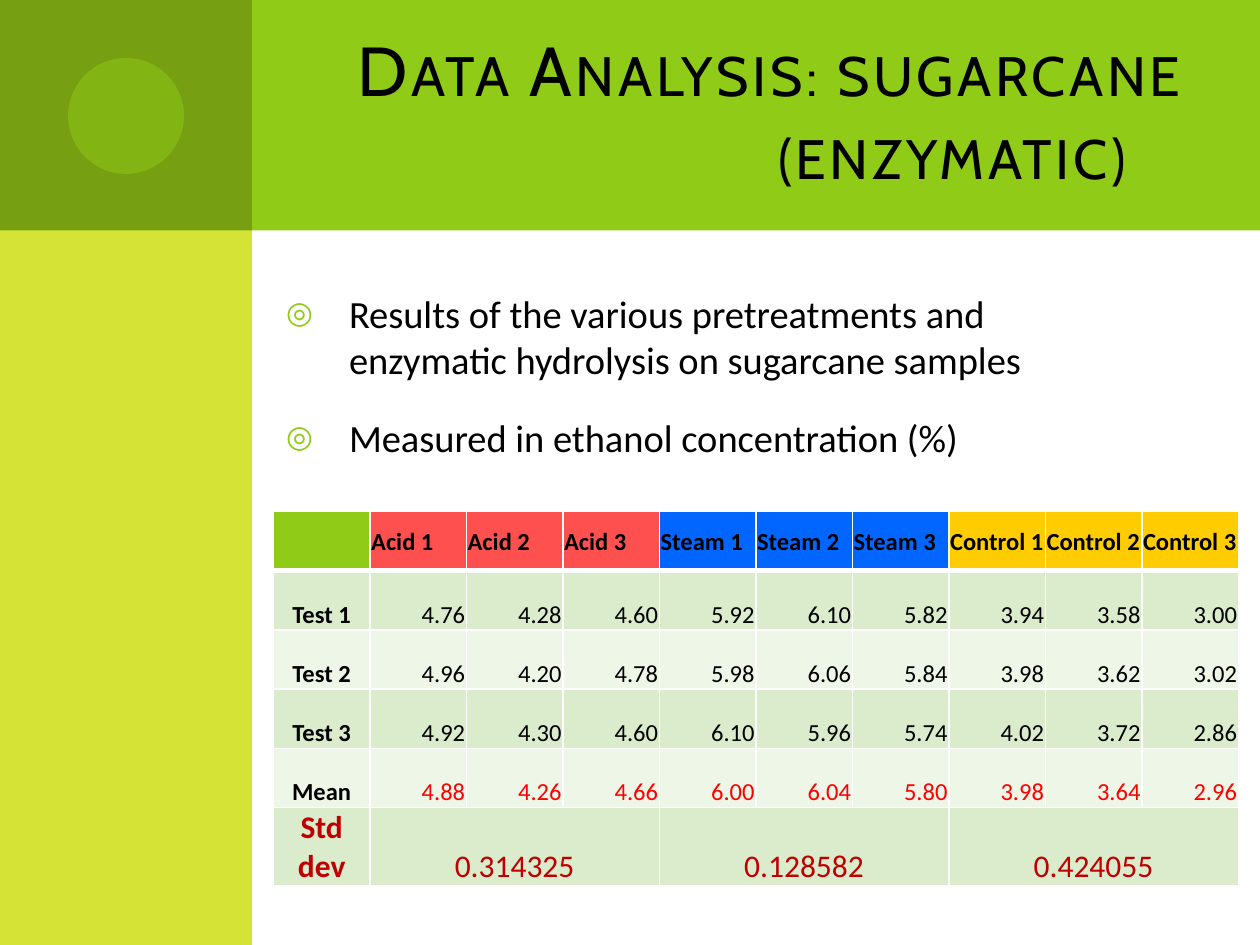
from dataclasses import dataclass

from lxml.etree import SubElement
from pptx import Presentation
from pptx.dml.color import RGBColor
from pptx.enum.shapes import MSO_SHAPE as Shape
from pptx.enum.text import MSO_ANCHOR as Anchor, MSO_AUTO_SIZE as AutoSize, PP_ALIGN as Align
from pptx.oxml.ns import qn
from pptx.util import Inches, Pt


@dataclass(frozen=True)
class Theme:
    """Colours, fonts and type sizes of the slide."""
    green: str = "8FCB17"
    dark_green: str = "769F11"
    lime: str = "D4E336"
    white: str = "FFFFFF"
    black: str = "000000"
    mean_red: str = "FF0000"
    deviation_red: str = "C00000"
    acid: str = "FF5050"
    steam: str = "0066FF"
    control: str = "FFCC00"
    bands: tuple = ("DBECCC", "EEF6E8")
    title_font: str = "Cabin"
    body_font: str = "Calibri"
    title_size: float = 39.6
    body_size: float = 22
    table_size: float = 14
    deviation_size: float = 18


class SlideBuilder:
    """Draws styled elements on the current slide."""

    def __init__(self, slide, theme):
        """Keep the slide and its theme."""
        self.slide = slide
        self.theme = theme

    def format_run(self, run, font, size, color, bold=False):
        """Set the character format of a run."""
        run.font.name = font
        run.font.size = Pt(size)
        run.font.bold = bold
        run.font.color.rgb = RGBColor.from_string(color)

    def panel(self, kind, left, top, width, height, color, opacity=100):
        """Add a plain shape without an outline."""
        shape = self.slide.shapes.add_shape(
            kind, Inches(left), Inches(top), Inches(width), Inches(height))
        shape.shadow.inherit = False
        shape.line.fill.background()
        shape.fill.solid()
        shape.fill.fore_color.rgb = RGBColor.from_string(color)
        if opacity < 100:
            color_element = next(shape.element.spPr.iter(qn("a:srgbClr")))
            SubElement(color_element, qn("a:alpha"), val=str(opacity * 1000))

    def place(self, placeholder, left, top, width, height, anchor):
        """Position a placeholder in front of the panels and return its text frame."""
        placeholder.left, placeholder.top = Inches(left), Inches(top)
        placeholder.width, placeholder.height = Inches(width), Inches(height)
        placeholder.element.getparent().append(placeholder.element)
        text_frame = placeholder.text_frame
        text_frame.word_wrap = True
        text_frame.auto_size = AutoSize.NONE
        text_frame.vertical_anchor = anchor
        return text_frame

    def title(self, text, *box):
        """Fill the title placeholder with spaced small capitals."""
        text_frame = self.place(self.slide.shapes.title, *box, Anchor.MIDDLE)
        text_frame.text = text
        paragraph = text_frame.paragraphs[0]
        paragraph.alignment = Align.RIGHT
        run = paragraph.runs[0]
        self.format_run(run, self.theme.title_font, self.theme.title_size, self.theme.black)
        properties = run.font._element
        properties.set("cap", "small")
        properties.set("spc", "200")

    def bullets(self, lines, *box):
        """Fill the body placeholder with a bulleted list."""
        text_frame = self.place(self.slide.placeholders[1], *box, Anchor.TOP)
        text_frame.text = "\n".join(lines)
        for paragraph in text_frame.paragraphs:
            paragraph.space_before = Pt(18)
            properties = paragraph._p.get_or_add_pPr()
            properties.set("marL", str(Inches(0.5)))
            properties.set("indent", str(Inches(-0.5)))
            bullet_color = SubElement(properties, qn("a:buClr"))
            SubElement(bullet_color, qn("a:srgbClr"), val=self.theme.green)
            SubElement(properties, qn("a:buSzPct"), val="80000")
            SubElement(properties, qn("a:buChar"), char="◎")
            self.format_run(paragraph.runs[0], self.theme.body_font,
                            self.theme.body_size, self.theme.black)

    def table(self, row_heights, columns, left, top, width, height):
        """Add a table with equal columns and return it."""
        table = self.slide.shapes.add_table(
            len(row_heights), columns,
            Inches(left), Inches(top), Inches(width), Inches(height)).table
        for column in table.columns:
            column.width = Inches(width / columns)
        for row, row_height in zip(table.rows, row_heights):
            row.height = Inches(row_height)
        return table

    def cell(self, cell, text, fill, anchor=Anchor.BOTTOM, align=Align.CENTER,
             size=None, color=None, bold=False, header=False):
        """Fill and format one table cell."""
        cell.fill.solid()
        cell.fill.fore_color.rgb = RGBColor.from_string(fill)
        self.borders(cell, header)
        if not text:
            return
        cell.margin_left = cell.margin_right = cell.margin_top = Inches(0.01)
        cell.margin_bottom = 0
        cell.vertical_anchor = anchor
        cell.text_frame.text = text
        paragraph = cell.text_frame.paragraphs[0]
        paragraph.alignment = align
        self.format_run(paragraph.runs[0], self.theme.body_font,
                        size or self.theme.table_size, color or self.theme.black, bold)

    def borders(self, cell, header):
        """Draw white cell borders, with a heavy line under the header."""
        widths = {"lnL": 1, "lnR": 1, "lnB": 3 if header else 1}
        properties = cell._tc.get_or_add_tcPr()
        for position, (side, width) in enumerate(widths.items()):
            line = SubElement(properties, qn(f"a:{side}"), w=str(Pt(width)))
            fill = SubElement(line, qn("a:solidFill"))
            SubElement(fill, qn("a:srgbClr"), val=self.theme.white)
            properties.insert(position, line)


def add_results(builder):
    """Add the table of ethanol concentrations."""
    theme = builder.theme
    groups = [("Acid", theme.acid, "0.314325"),
              ("Steam", theme.steam, "0.128582"),
              ("Control", theme.control, "0.424055")]
    results = [
        ("Test 1", "4.76 4.28 4.60 5.92 6.10 5.82 3.94 3.58 3.00", theme.black),
        ("Test 2", "4.96 4.20 4.78 5.98 6.06 5.84 3.98 3.62 3.02", theme.black),
        ("Test 3", "4.92 4.30 4.60 6.10 5.96 5.74 4.02 3.72 2.86", theme.black),
        ("Mean", "4.88 4.26 4.66 6.00 6.04 5.80 3.98 3.64 2.96", theme.mean_red),
    ]
    table = builder.table([0.47] * 5 + [0.54], 10, 2.17, 4.06, 7.66, 2.98)

    builder.cell(table.cell(0, 0), "", theme.green, header=True)
    for row, (label, values, color) in enumerate(results, start=1):
        band = theme.bands[(row - 1) % 2]
        builder.cell(table.cell(row, 0), label, band, bold=True)
        for column, value in enumerate(values.split(), start=1):
            builder.cell(table.cell(row, column), value, band, align=Align.RIGHT, color=color)

    deviation_style = dict(fill=theme.bands[0], size=theme.deviation_size,
                           color=theme.deviation_red)
    builder.cell(table.cell(5, 0), "Std dev", bold=True, **deviation_style)
    for index, (name, color, deviation) in enumerate(groups):
        first = 1 + 3 * index
        for sample in range(3):
            builder.cell(table.cell(0, first + sample), f"{name} {sample + 1}", color,
                         Anchor.MIDDLE, Align.LEFT, bold=True, header=True)
        table.cell(5, first).merge(table.cell(5, first + 2))
        builder.cell(table.cell(5, first), deviation, **deviation_style)


def main():
    """Build and save the slide."""
    presentation = Presentation()
    presentation.slide_width, presentation.slide_height = Inches(10), Inches(7.5)
    theme = Theme()
    builder = SlideBuilder(presentation.slides.add_slide(presentation.slide_layouts[1]), theme)
    builder.panel(Shape.RECTANGLE, 0.5, 0, 9.5, 1.83, theme.green)
    builder.panel(Shape.RECTANGLE, 0, 0, 2, 7.5, theme.lime)
    builder.panel(Shape.RECTANGLE, 0, 0, 2, 1.83, theme.dark_green)
    builder.panel(Shape.OVAL, 0.54, 0.46, 0.92, 0.92, theme.green, opacity=50)
    builder.title("Data Analysis: sugarcane (enzymatic) ", 2.67, 0.25, 6.83, 1.25)
    builder.bullets(["Results of the various pretreatments and enzymatic hydrolysis "
                     "on sugarcane samples",
                     "Measured in ethanol concentration (%)"], 2.17, 2.25, 6.83, 4.2)
    add_results(builder)
    presentation.save("out.pptx")


if __name__ == "__main__":
    main()
